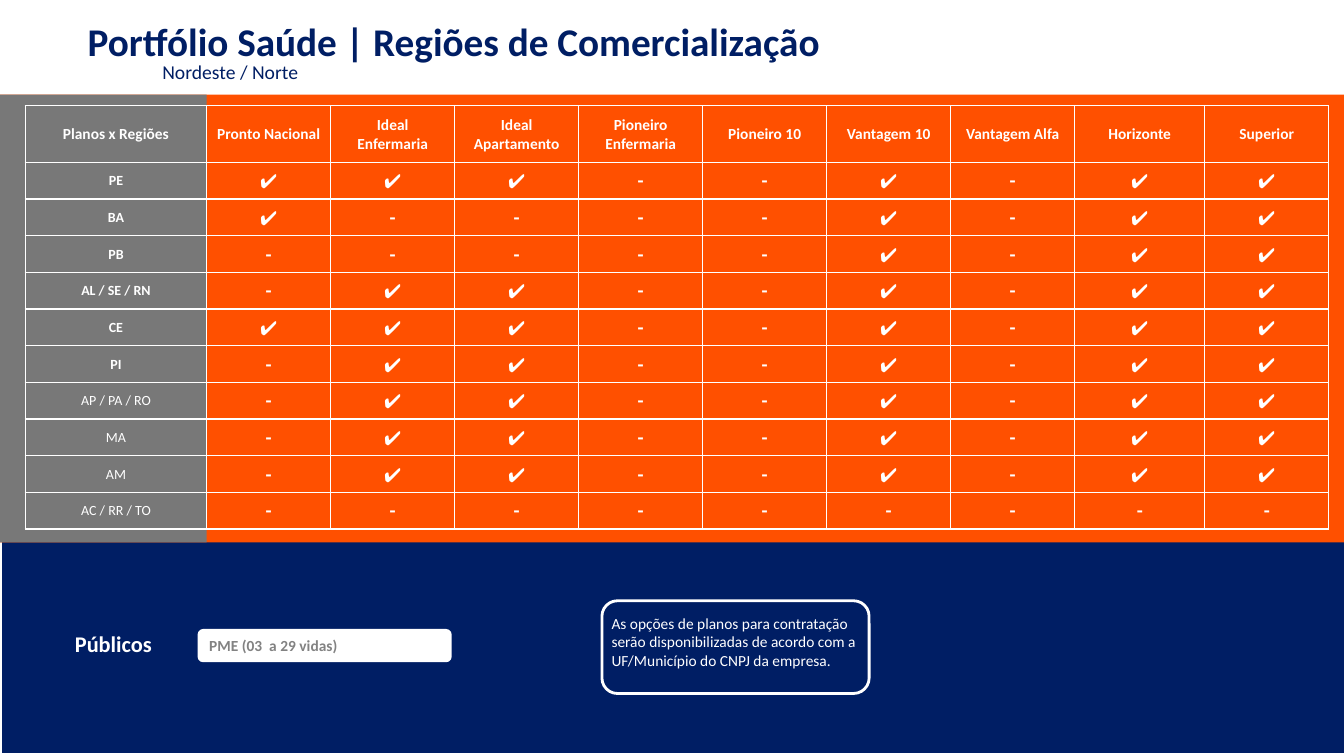
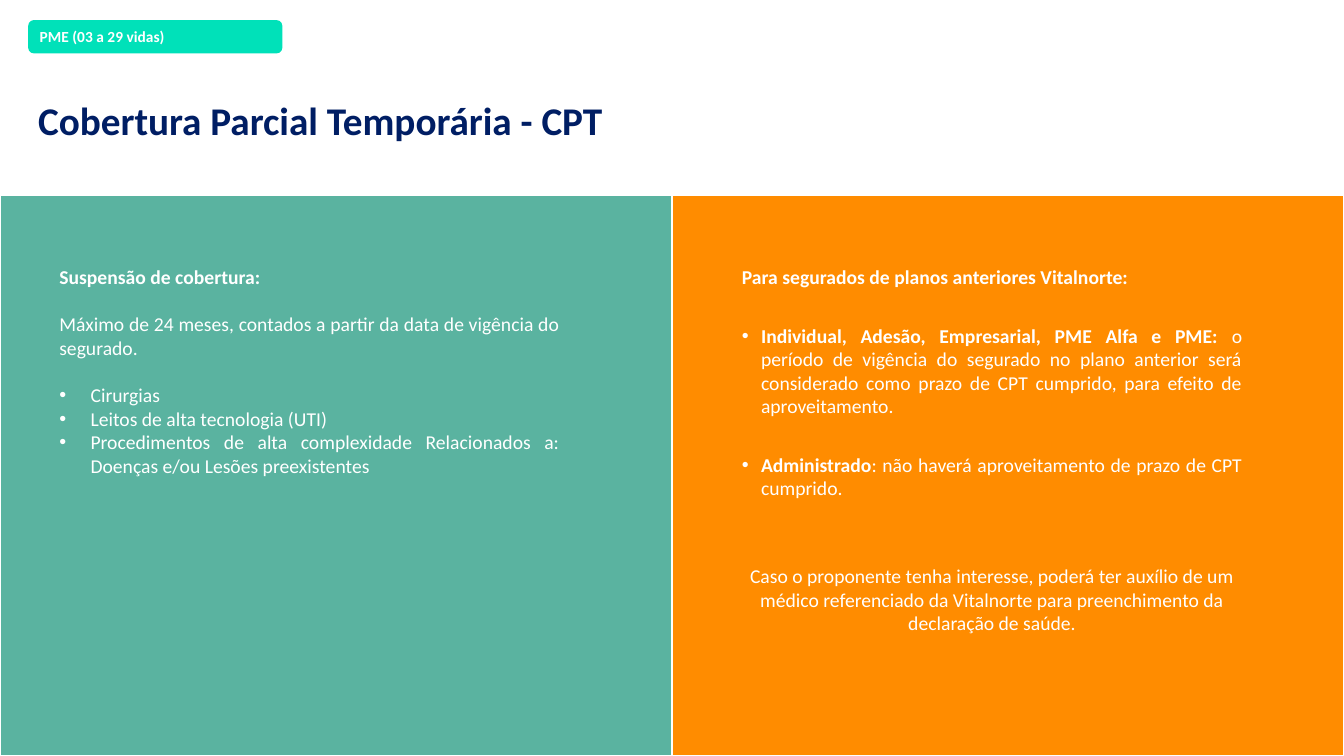
import pptx
import pptx.util
import pptx.dml.color
import pptx.enum.shapes
import pptx.enum.text
import pptx.oxml
import pptx.oxml.ns
from lxml import etree

WIDTH, HEIGHT = 13.33, 7.5
NAVY, ORANGE, GRAY, WHITE = "001E64", "FF5000", "787878", "FFFFFF"
AMBER, TEAL, MINT, PILL_GRAY = "FF8C00", "5AB3A0", "00E1B9", "828282"
BODY_FONT, CHECK_FONT = "Calibri", "Open Sans"
RECT = pptx.enum.shapes.MSO_SHAPE.RECTANGLE
ROUNDED = pptx.enum.shapes.MSO_SHAPE.ROUNDED_RECTANGLE
ALIGN = pptx.enum.text.PP_ALIGN
TOP = pptx.enum.text.MSO_ANCHOR.TOP
MIDDLE = pptx.enum.text.MSO_ANCHOR.MIDDLE
PILL_SIZE = (2.52, 0.33)
NARROW_INSETS = (0.07, 0.04, 0.07, 0.04)
BOX_INSETS = (0.1, 0.05, 0.1, 0.05)

PLANS = [
    "Planos x Regiões", "Pronto Nacional", "Ideal\nEnfermaria", "Ideal\nApartamento",
    "Pioneiro\nEnfermaria", "Pioneiro 10", "Vantagem 10", "Vantagem Alfa",
    "Horizonte", "Superior",
]
REGIONS = [
    ("PE", "✔✔✔--✔-✔✔"),
    ("BA", "✔----✔-✔✔"),
    ("PB", "-----✔-✔✔"),
    ("AL / SE / RN", "-✔✔--✔-✔✔"),
    ("CE", "✔✔✔--✔-✔✔"),
    ("PI", "-✔✔--✔-✔✔"),
    ("AP / PA / RO", "-✔✔--✔-✔✔"),
    ("MA", "-✔✔--✔-✔✔"),
    ("AM", "-✔✔--✔-✔✔"),
    ("AC / RR / TO", "---------"),
]
BOLD_REGIONS = 6
PLAN_WIDTHS = [1.8] + [1.23] * 7 + [1.29, 1.23]
HEADER_HEIGHT, REGION_HEIGHT = 0.56, 0.364

CONTRACT_NOTE = ("As opções de planos para contratação serão disponibilizadas de acordo "
                 "com a UF/Município do CNPJ da empresa.")

SUSPENSION = [
    {"runs": [("Suspensão de cobertura:", True)]},
    {"runs": [("Máximo de 24 meses, contados a partir da data de vigência do segurado.", False)],
     "before": 17},
    {"runs": [("Cirurgias", False)], "before": 17, "indent": 0.31},
    {"runs": [("Leitos de alta tecnologia (UTI)", False)], "indent": 0.31},
    {"runs": [("Procedimentos de alta complexidade Relacionados a: "
               "Doenças e/ou Lesões preexistentes", False)], "indent": 0.31},
]
PREVIOUS_PLANS = [
    {"runs": [("Para segurados de planos anteriores Vitalnorte:", True)]},
    {"runs": [("Individual, Adesão, Empresarial, PME Alfa e PME: ", True),
              ("o período de vigência do segurado no plano anterior será considerado como "
               "prazo de CPT cumprido, para efeito de aproveitamento.", False)],
     "before": 25, "indent": 0.19},
    {"runs": [("Administrado", True),
              (": não haverá aproveitamento de prazo de CPT cumprido.", False)],
     "before": 25, "indent": 0.19},
    {"runs": [("Caso o proponente tenha interesse, poderá ter auxílio de um médico "
               "referenciado da Vitalnorte para preenchimento da declaração de saúde.", False)],
     "before": 46, "align": ALIGN.CENTER},
]
PANELS = [(1, AMBER, 7.26, PREVIOUS_PLANS), (0, TEAL, 0.49, SUSPENSION)]


def inches(*lengths):
    return [pptx.util.Inches(length) for length in lengths]


def color(hex_code):
    return pptx.dml.color.RGBColor.from_string(hex_code)


def style(paragraph, size, ink=WHITE, bold=None, align=ALIGN.LEFT, face=BODY_FONT):
    paragraph.alignment = align
    font = paragraph.font
    font.name, font.size, font.bold = face, pptx.util.Pt(size), bold
    font.color.rgb = color(ink)


def set_frame(frame, insets, anchor):
    frame.word_wrap = True
    frame.vertical_anchor = anchor
    (frame.margin_left, frame.margin_top,
     frame.margin_right, frame.margin_bottom) = inches(*insets)


def add_block(slide, preset, place, fill=None, line=None, corner=None):
    block = slide.shapes.add_shape(preset, *inches(*place))
    block.shadow.inherit = False
    if fill:
        block.fill.solid()
        block.fill.fore_color.rgb = color(fill)
    else:
        block.fill.background()
    if line:
        block.line.color.rgb = color(line)
        block.line.width = pptx.util.Pt(2)
    else:
        block.line.fill.background()
    if corner:
        block.adjustments[0] = corner
    return block


def add_label(slide, place, text, size, ink, bold=None, insets=BOX_INSETS,
              anchor=TOP, align=ALIGN.LEFT):
    frame = slide.shapes.add_textbox(*inches(*place)).text_frame
    set_frame(frame, insets, anchor)
    paragraph = frame.paragraphs[0]
    paragraph.text = text
    style(paragraph, size, ink, bold, align)
    return paragraph


def add_title(slide, place, text, insets=BOX_INSETS):
    return add_label(slide, place, text, 28, NAVY, True, insets)


def add_boxed_text(slide, place, text, ink, bold, insets=BOX_INSETS, **look):
    frame = add_block(slide, ROUNDED, place, corner=0.167, **look).text_frame
    set_frame(frame, insets, MIDDLE)
    frame.paragraphs[0].text = text
    style(frame.paragraphs[0], 11, ink, bold)


def add_bullet(paragraph, indent):
    properties = paragraph._p.get_or_add_pPr()
    hang = pptx.util.Inches(indent)
    properties.set("marL", str(hang))
    properties.set("indent", str(-hang))
    etree.SubElement(properties, pptx.oxml.ns.qn("a:buFont")).set("typeface", "Arial")
    etree.SubElement(properties, pptx.oxml.ns.qn("a:buChar")).set("char", "•")


def add_story(slide, place, story):
    frame = slide.shapes.add_textbox(*inches(*place)).text_frame
    set_frame(frame, BOX_INSETS, TOP)
    for index, entry in enumerate(story):
        paragraph = frame.add_paragraph() if index else frame.paragraphs[0]
        if "before" in entry:
            paragraph.space_before = pptx.util.Pt(entry["before"])
        if "indent" in entry:
            add_bullet(paragraph, entry["indent"])
        style(paragraph, 14, align=entry.get("align", ALIGN.JUSTIFY))
        for text, bold in entry["runs"]:
            run = paragraph.add_run()
            run.text, run.font.bold = text, bold


def add_borders(cell):
    properties = cell._tc.get_or_add_tcPr()
    for index, side in enumerate(("lnL", "lnR", "lnT", "lnB")):
        properties.insert(index, pptx.oxml.parse_xml(
            f'<a:{side} {pptx.oxml.ns.nsdecls("a")} w="12700"><a:solidFill>'
            f'<a:srgbClr val="{WHITE}"/></a:solidFill></a:{side}>'))


def fill_cell(cell, text, size, bold):
    cell.vertical_anchor = MIDDLE
    (cell.margin_left, cell.margin_top,
     cell.margin_right, cell.margin_bottom) = inches(0.01, 0.01, 0.01, 0)
    cell.fill.background()
    add_borders(cell)
    paragraph = cell.text_frame.paragraphs[0]
    paragraph.text = text
    style(paragraph, size, bold=bold, align=ALIGN.CENTER,
          face=CHECK_FONT if text == "✔" else BODY_FONT)


def add_coverage(slide):
    heights = [HEADER_HEIGHT] + [REGION_HEIGHT] * len(REGIONS)
    coverage = slide.shapes.add_table(
        len(heights), len(PLANS),
        *inches(0.25, 1.05, sum(PLAN_WIDTHS), sum(heights))).table
    coverage.first_row = coverage.horz_banding = False
    for column, width in zip(coverage.columns, PLAN_WIDTHS):
        column.width = pptx.util.Inches(width)
    for row, height in zip(coverage.rows, heights):
        row.height = pptx.util.Inches(height)
    for column, plan in enumerate(PLANS):
        fill_cell(coverage.cell(0, column), plan, 11, True)
    for row, (region, marks) in enumerate(REGIONS, 1):
        fill_cell(coverage.cell(row, 0), region, 10, row <= BOLD_REGIONS)
        for column, mark in enumerate(marks, 1):
            fill_cell(coverage.cell(row, column), mark, 14, True)


def build_regions(slide):
    add_block(slide, RECT, (0.02, 4.51, 13.35, 2.96), NAVY)
    add_block(slide, RECT, (0, 0.94, WIDTH, 4.44), ORANGE)
    add_block(slide, RECT, (-0.02, 0.94, 2.07, 4.44), GRAY)
    add_title(slide, (0.8, 0.13, 7.52, 0.47),
              "Portfólio Saúde | Regiões de Comercialização", NARROW_INSETS)
    add_label(slide, (1.54, 0.55, 2.6, 0.37), "Nordeste / Norte", 14, NAVY,
              insets=NARROW_INSETS)
    add_label(slide, (0.29, 6.17, 1.67, 0.43), "Públicos", 16, WHITE, True,
              anchor=MIDDLE, align=ALIGN.CENTER)
    add_coverage(slide)
    add_boxed_text(slide, (5.97, 5.96, 2.65, 0.92), CONTRACT_NOTE, WHITE, False,
                   (0.05, 0.05, 0.05, 0.16), line=WHITE)
    add_boxed_text(slide, (1.96, 6.24, *PILL_SIZE), "PME (03  a 29 vidas)",
                   PILL_GRAY, True, fill=WHITE)


def build_cpt(slide):
    panel_width, panel_top = WIDTH / 2, 1.93
    for column, fill, _, _ in PANELS:
        add_block(slide, RECT, (column * panel_width, panel_top, panel_width,
                                HEIGHT - panel_top), fill, WHITE)
    add_boxed_text(slide, (0.28, 0.2, *PILL_SIZE), "PME (03 a 29 vidas)",
                   WHITE, True, fill=MINT)
    title = add_title(slide, (0.28, 0.96, 5.95, 0.43), "Cobertura Parcial Temporária - CPT")
    title.line_spacing = 0.9
    for _, _, left, story in PANELS:
        add_story(slide, (left, 2.58, 5.16, 3.79), story)


def main():
    deck = pptx.Presentation()
    deck.slide_width, deck.slide_height = inches(WIDTH, HEIGHT)
    for build in (build_regions, build_cpt):
        build(deck.slides.add_slide(deck.slide_layouts[6]))
    deck.save("out.pptx")


if __name__ == "__main__":
    main()
